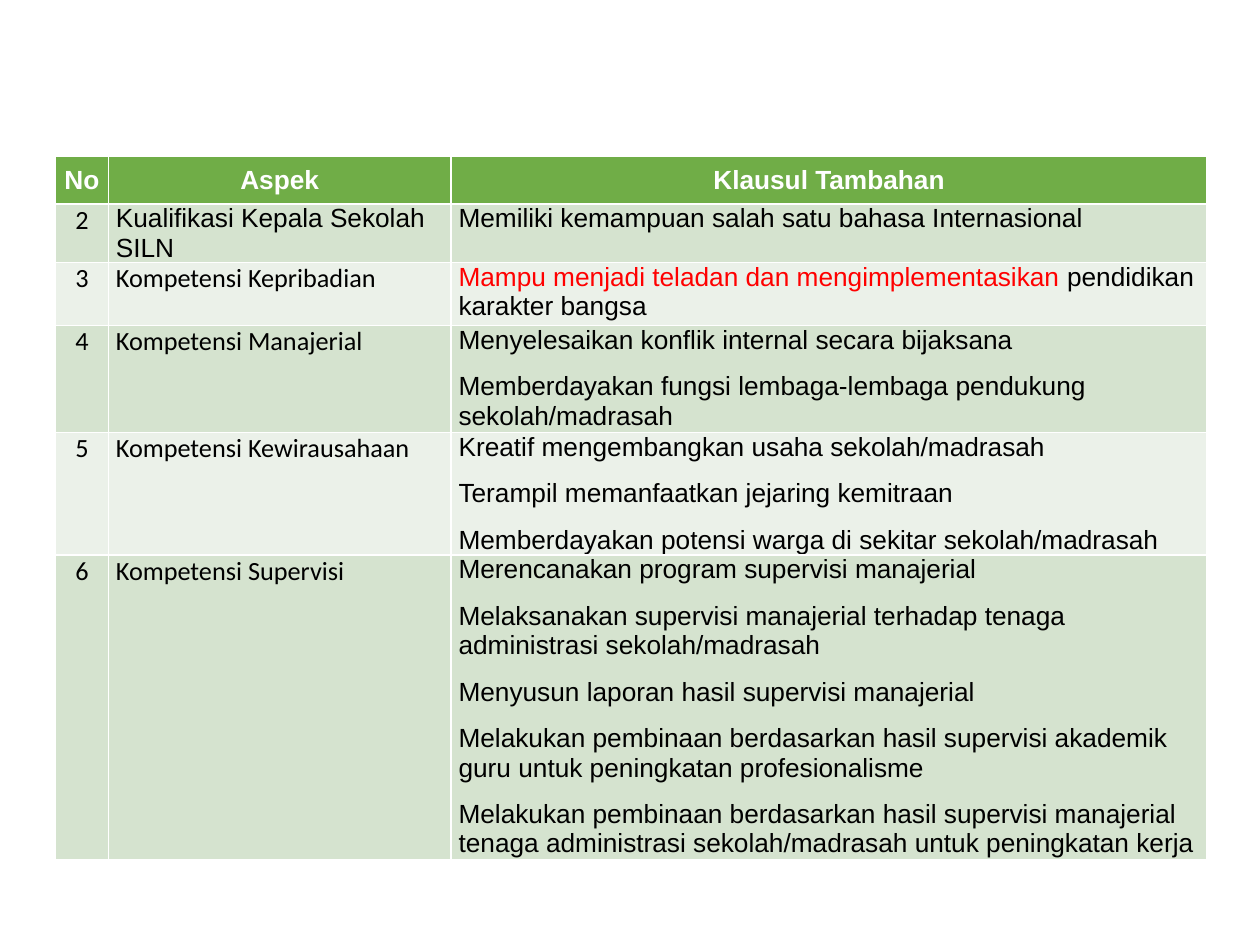
from dataclasses import dataclass

from pptx import Presentation
from pptx.dml.color import RGBColor
from pptx.enum.text import MSO_ANCHOR, PP_ALIGN
from pptx.util import Inches, Pt


@dataclass(frozen=True)
class Theme:
    header_fill: RGBColor = RGBColor(0x70, 0xAD, 0x47)
    band_fills: tuple = (RGBColor(0xD5, 0xE3, 0xCF), RGBColor(0xEB, 0xF1, 0xE9))
    header_text: RGBColor = RGBColor(0xFF, 0xFF, 0xFF)
    text: RGBColor = RGBColor(0, 0, 0)
    accent: RGBColor = RGBColor(0xFF, 0, 0)
    size: Pt = Pt(15)
    spacing: Pt = Pt(5)
    font: str = "Arial"
    label_font: str = "Calibri"


HEADERS = ["No", "Aspek", "Klausul Tambahan"]
HIGHLIGHT = "Mampu menjadi teladan dan mengimplementasikan"
ASPECTS = [
    ("2", "Kualifikasi Kepala Sekolah SILN",
     ["Memiliki kemampuan salah satu bahasa Internasional"]),
    ("3", "Kompetensi Kepribadian",
     [HIGHLIGHT + " pendidikan karakter bangsa"]),
    ("4", "Kompetensi Manajerial",
     ["Menyelesaikan konflik internal secara bijaksana",
      "Memberdayakan fungsi lembaga-lembaga pendukung sekolah/madrasah"]),
    ("5", "Kompetensi Kewirausahaan",
     ["Kreatif mengembangkan usaha sekolah/madrasah",
      "Terampil memanfaatkan jejaring kemitraan",
      "Memberdayakan potensi warga di sekitar sekolah/madrasah"]),
    ("6", "Kompetensi Supervisi",
     ["Merencanakan program supervisi manajerial",
      "Melaksanakan supervisi manajerial terhadap tenaga administrasi sekolah/madrasah",
      "Menyusun laporan hasil supervisi manajerial",
      "Melakukan pembinaan berdasarkan hasil supervisi akademik guru "
      "untuk peningkatan profesionalisme",
      "Melakukan pembinaan berdasarkan hasil supervisi manajerial tenaga "
      "administrasi sekolah/madrasah untuk peningkatan kerja"]),
]
COLUMN_WIDTHS = [0.42, 2.72, 6]
ROW_HEIGHTS = [0.38, 0.25, 0.5, 0.85, 0.96, 2.42]


class SlideBuilder:
    def __init__(self, slide, theme):
        self.slide = slide
        self.theme = theme

    def table(self, left, top, column_widths, row_heights):
        """Add an empty table whose white rules come from the default table style."""
        table = self.slide.shapes.add_table(
            len(row_heights), len(column_widths), Inches(left), Inches(top),
            Inches(sum(column_widths)), Inches(sum(row_heights))).table
        for column, width in zip(table.columns, column_widths):
            column.width = Inches(width)
        for row, height in zip(table.rows, row_heights):
            row.height = Inches(height)
        return table

    def cell(self, cell, texts, fill, color, font, centered=False, bold=False, spacing=None):
        cell.fill.solid()
        cell.fill.fore_color.rgb = fill
        cell.margin_left = cell.margin_right = Inches(0.06)
        cell.margin_top = cell.margin_bottom = 0
        cell.text = "\n".join(texts)
        for paragraph in cell.text_frame.paragraphs:
            paragraph.alignment = PP_ALIGN.CENTER if centered else PP_ALIGN.LEFT
            paragraph.space_before = paragraph.space_after = spacing
            paragraph.font.size = self.theme.size
            paragraph.font.name = font
            paragraph.font.bold = bold
            paragraph.font.color.rgb = color

    def header_cell(self, cell, text):
        theme = self.theme
        self.cell(cell, [text], theme.header_fill, theme.header_text, theme.font,
                  centered=True, bold=True)
        cell.vertical_anchor = MSO_ANCHOR.MIDDLE

    def body_cell(self, cell, texts, band, font, centered=False):
        theme = self.theme
        self.cell(cell, texts, theme.band_fills[band % 2], theme.text, font,
                  centered=centered, spacing=theme.spacing)

    def highlight(self, paragraph, phrase):
        """Colour the phrase that opens the paragraph."""
        run = paragraph.runs[0]
        rest = run.text.removeprefix(phrase)
        run.text = phrase
        run.font.color.rgb = self.theme.accent
        paragraph.add_run().text = rest


def main():
    presentation = Presentation()
    presentation.slide_width, presentation.slide_height = Inches(10), Inches(7.5)
    slide = presentation.slides.add_slide(presentation.slide_layouts[6])
    theme = Theme()
    builder = SlideBuilder(slide, theme)

    table = builder.table(0.44, 1.24, COLUMN_WIDTHS, ROW_HEIGHTS)
    for column, header in enumerate(HEADERS):
        builder.header_cell(table.cell(0, column), header)
    for band, (number, aspect, clauses) in enumerate(ASPECTS):
        number_cell, aspect_cell, clause_cell = table.rows[band + 1].cells
        aspect_font = theme.label_font if band else theme.font
        builder.body_cell(number_cell, [number], band, theme.label_font, centered=True)
        builder.body_cell(aspect_cell, [aspect], band, aspect_font)
        builder.body_cell(clause_cell, clauses, band, theme.font)
        if clauses[0].startswith(HIGHLIGHT):
            builder.highlight(clause_cell.text_frame.paragraphs[0], HIGHLIGHT)

    presentation.save("out.pptx")


if __name__ == "__main__":
    main()
